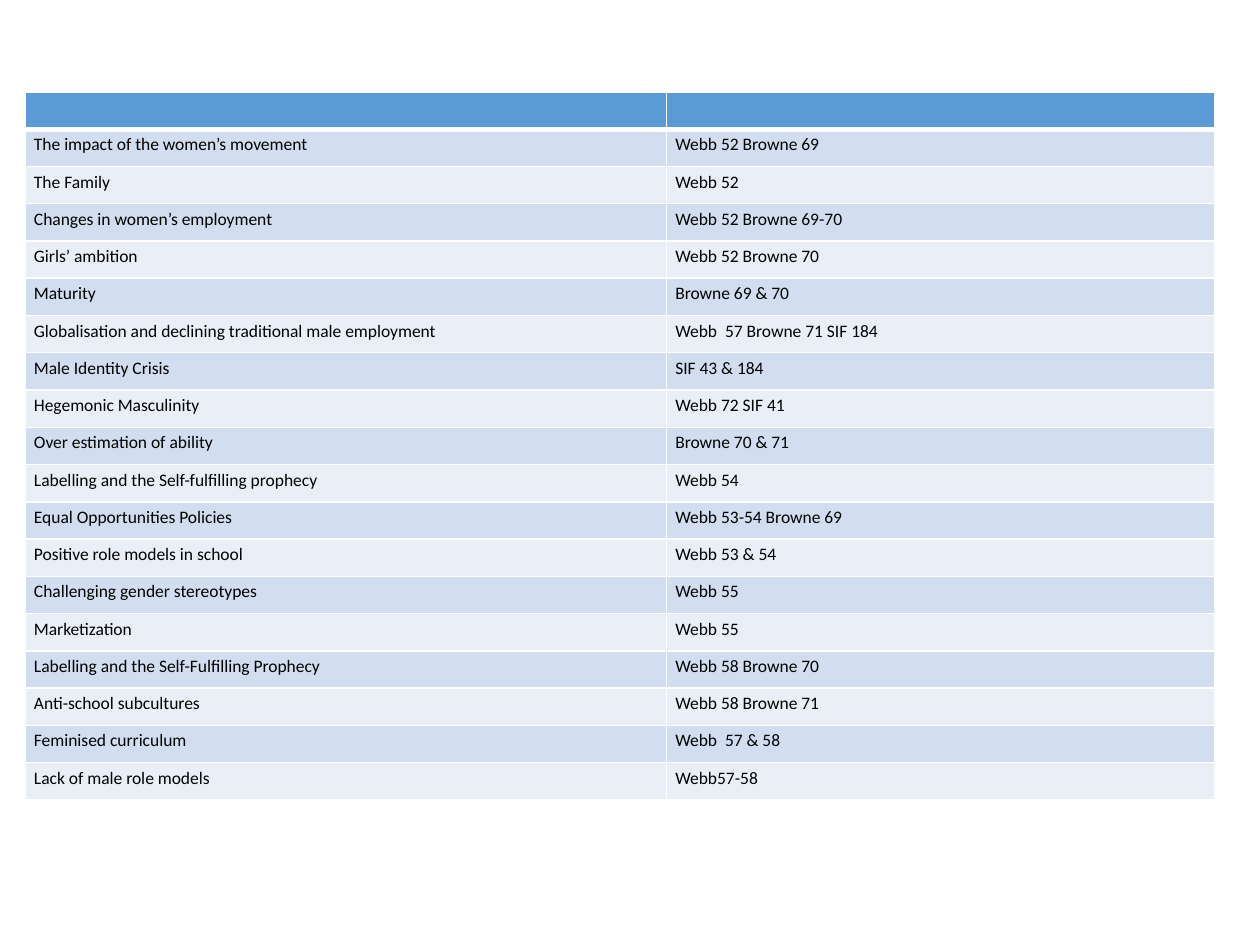
import dataclasses
import lxml.etree
import pptx
import pptx.dml.color
import pptx.oxml.ns
import pptx.util

Inches = pptx.util.Inches
Pt = pptx.util.Pt
RGB = pptx.dml.color.RGBColor.from_string
qn = pptx.oxml.ns.qn


@dataclasses.dataclass(frozen=True)
class Theme:
    font: str = "Calibri"
    size: float = 10
    ink: str = "000000"
    header: str = "5B9BD5"
    bands: tuple = ("D2DEEF", "EAEFF7")
    border: str = "FFFFFF"
    thin: float = 1
    thick: float = 3


TOPICS = [
    ("The impact of the women’s movement", "Webb 52 Browne 69"),
    ("The Family", "Webb 52"),
    ("Changes in women’s employment", "Webb 52 Browne 69-70"),
    ("Girls’ ambition", "Webb 52 Browne 70"),
    ("Maturity", "Browne 69 & 70"),
    ("Globalisation and declining traditional male employment", "Webb  57 Browne 71 SIF 184"),
    ("Male Identity Crisis", "SIF 43 & 184"),
    ("Hegemonic Masculinity", "Webb 72 SIF 41"),
    ("Over estimation of ability", "Browne 70 & 71"),
    ("Labelling and the Self-fulfilling prophecy", "Webb 54"),
    ("Equal Opportunities Policies", "Webb 53-54 Browne 69"),
    ("Positive role models in school", "Webb 53 & 54"),
    ("Challenging gender stereotypes", "Webb 55"),
    ("Marketization", "Webb 55"),
    ("Labelling and the Self-Fulfilling Prophecy", "Webb 58 Browne 70"),
    ("Anti-school subcultures", "Webb 58 Browne 71"),
    ("Feminised curriculum", "Webb  57 & 58"),
    ("Lack of male role models", "Webb57-58"),
]


def write_text(tf, text, *, font, size, color):
    p = tf.paragraphs[0]
    if text:
        r = p.add_run()
        r.text = text
        r.font.name = font
        r.font.size = Pt(size)
        r.font.bold = False
        r.font.color.rgb = RGB(color)
    else:
        end = lxml.etree.SubElement(p._p, qn("a:endParaRPr"))
        end.set("sz", str(int(size * 100)))


class SlideBuilder:
    def __init__(self, slide, theme):
        self.s = slide
        self.theme = theme

    def borders(self, cell, **widths):
        tc_pr = cell._tc.get_or_add_tcPr()
        for i, side in enumerate("LRTB"):
            ln = lxml.etree.Element(qn(f"a:ln{side}"))
            ln.set("w", str(Pt(widths.get(side, self.theme.thin))))
            fill = lxml.etree.SubElement(ln, qn("a:solidFill"))
            lxml.etree.SubElement(fill, qn("a:srgbClr")).set("val", self.theme.border)
            tc_pr.insert(i, ln)

    def cell(self, cell, text, fill, **widths):
        th = self.theme
        cell.fill.solid()
        cell.fill.fore_color.rgb = RGB(fill)
        cell.margin_left = cell.margin_right = Inches(0.07)
        cell.margin_top = cell.margin_bottom = Inches(0.04)
        write_text(cell.text_frame, text, font=th.font, size=th.size, color=th.ink)
        self.borders(cell, **widths)

    def table(self, rows, left, top, height, col_widths):
        th = self.theme
        sp = self.s.shapes.add_table(
            len(rows), len(col_widths), Inches(left), Inches(top),
            Inches(sum(col_widths)), Inches(height))
        table = sp.table
        for column, width in zip(table.columns, col_widths):
            column.width = Inches(width)
        for i, row in enumerate(rows):
            fill = th.bands[(i - 1) % 2] if i else th.header
            widths = {0: {"B": th.thick}, 1: {"T": th.thick}}.get(i, {})
            for j, text in enumerate(row):
                self.cell(table.cell(i, j), text, fill, **widths)


def main():
    prs = pptx.Presentation()
    prs.slide_width = Inches(10)
    prs.slide_height = Inches(7.5)
    builder = SlideBuilder(prs.slides.add_slide(prs.slide_layouts[6]), Theme())
    builder.table([("", "")] + TOPICS, 0.2, 0.73, 5.62, (5.09, 4.35))
    prs.save("out.pptx")


if __name__ == "__main__":
    main()
